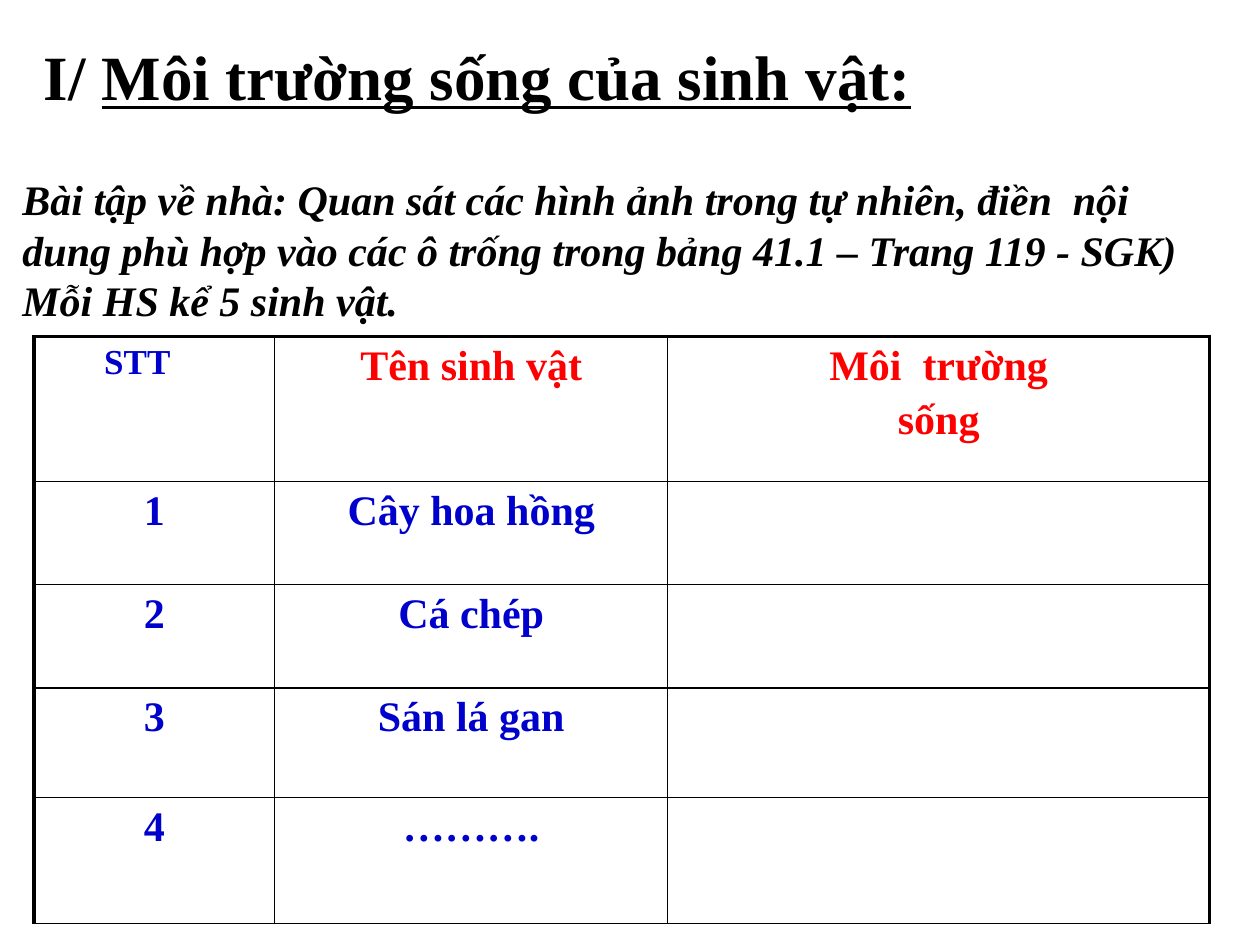
from dataclasses import dataclass
from lxml.etree import SubElement
from pptx import Presentation
from pptx.dml.color import RGBColor as RGB
from pptx.enum.text import MSO_ANCHOR, MSO_AUTO_SIZE, PP_ALIGN
from pptx.oxml.ns import qn
from pptx.util import Inches, Pt


@dataclass(frozen=True)
class Theme:
    font: str = "Times New Roman"
    ink: str = "000000"
    heading: str = "FF0000"
    entry: str = "0000CC"
    title: int = 36
    body: int = 24
    small: int = 20
    outer: float = 2.25
    inner: float = 1


THEME = Theme()
WIDTH, HEIGHT = 10, 7.5
COLS = (1.91, 3.12, 4.3)
ROWS = (1.15, 0.82, 0.82, 0.87, 1)
HEADINGS = (["STT"], ["Tên sinh vật"], ["Môi  trường", "sống"])
SPECIES = ("Cây hoa hồng", "Cá chép", "Sán lá gan", "……….")


def style(p, size, color, italic=None):
    f = p.font
    f.name, f.size, f.bold, f.italic = THEME.font, Pt(size), True, italic
    f.color.rgb = RGB.from_string(color)


def add_text(s, box, paragraphs, size, italic=None, top=0.05):
    """Each paragraph is a list of (text, underlined) runs."""
    tf = s.shapes.add_textbox(*map(Inches, box)).text_frame
    tf.word_wrap = True
    tf.margin_top = Inches(top)
    for i, runs in enumerate(paragraphs):
        p = tf.add_paragraph() if i else tf.paragraphs[0]
        style(p, size, THEME.ink, italic)
        for text, underlined in runs:
            r = p.add_run()
            r.text = text
            if underlined:
                r.font.underline = True
    return tf


def set_borders(cell, widths):
    """Widths in points, in the order left, right, top, bottom."""
    tc_pr = cell._tc.get_or_add_tcPr()
    for side, width in zip("LRTB", widths):
        ln = SubElement(tc_pr, qn(f"a:ln{side}"), w=str(Pt(width)))
        fill = SubElement(ln, qn("a:solidFill"))
        SubElement(fill, qn("a:srgbClr"), val=THEME.ink)


def fill_cell(cell, lines, size, color):
    for i, line in enumerate(lines):
        p = cell.text_frame.add_paragraph() if i else cell.text_frame.paragraphs[0]
        p.text = line
        p.alignment = PP_ALIGN.CENTER
        if i:
            p.space_before = Pt(0.2 * size)
        style(p, size, color)


def add_species_table(s, left, top):
    size = map(Inches, (left, top, sum(COLS), sum(ROWS)))
    table = s.shapes.add_table(len(ROWS), len(COLS), *size).table
    table.first_row = table.horz_banding = False
    for col, width in zip(table.columns, COLS):
        col.width = Inches(width)
    for row, height in zip(table.rows, ROWS):
        row.height = Inches(height)

    body = [([str(n)], [name], []) for n, name in enumerate(SPECIES, 1)]
    for i, row in enumerate([HEADINGS, *body]):
        for j, lines in enumerate(row):
            cell = table.cell(i, j)
            on_edge = (j == 0, j == len(COLS) - 1, i == 0, False)
            set_borders(cell, [THEME.outer if e else THEME.inner for e in on_edge])
            cell.fill.background()
            is_number_head = i == 0 and j == 0
            color = THEME.heading if i == 0 and j else THEME.entry
            fill_cell(cell, lines, THEME.small if is_number_head else THEME.body, color)
    table.cell(0, 0).margin_right = Inches(0.37)


def main():
    prs = Presentation()
    prs.slide_width, prs.slide_height = Inches(WIDTH), Inches(HEIGHT)
    s = prs.slides.add_slide(prs.slide_layouts[6])
    title = add_text(s, (0.25, 0.25, 9.46, 0.71),
                     [[("I/ ", False), ("Môi trường sống của sinh vật:", True)]],
                     THEME.title)
    title.auto_size = MSO_AUTO_SIZE.SHAPE_TO_FIT_TEXT
    add_species_table(s, 0.27, 2.67)
    task = add_text(s, (0.08, 1.09, 9.5, 1.33), [
        [("Bài tập về nhà: Quan sát các hình ảnh trong tự nhiên, điền  nội dung "
          "phù hợp vào các ô trống trong bảng 41.1 – Trang 119 - SGK)", False)],
        [("Mỗi HS kể 5 sinh vật.", False)],
    ], THEME.body, italic=True, top=0.29)
    task.vertical_anchor = MSO_ANCHOR.TOP
    prs.save("out.pptx")


if __name__ == "__main__":
    main()
